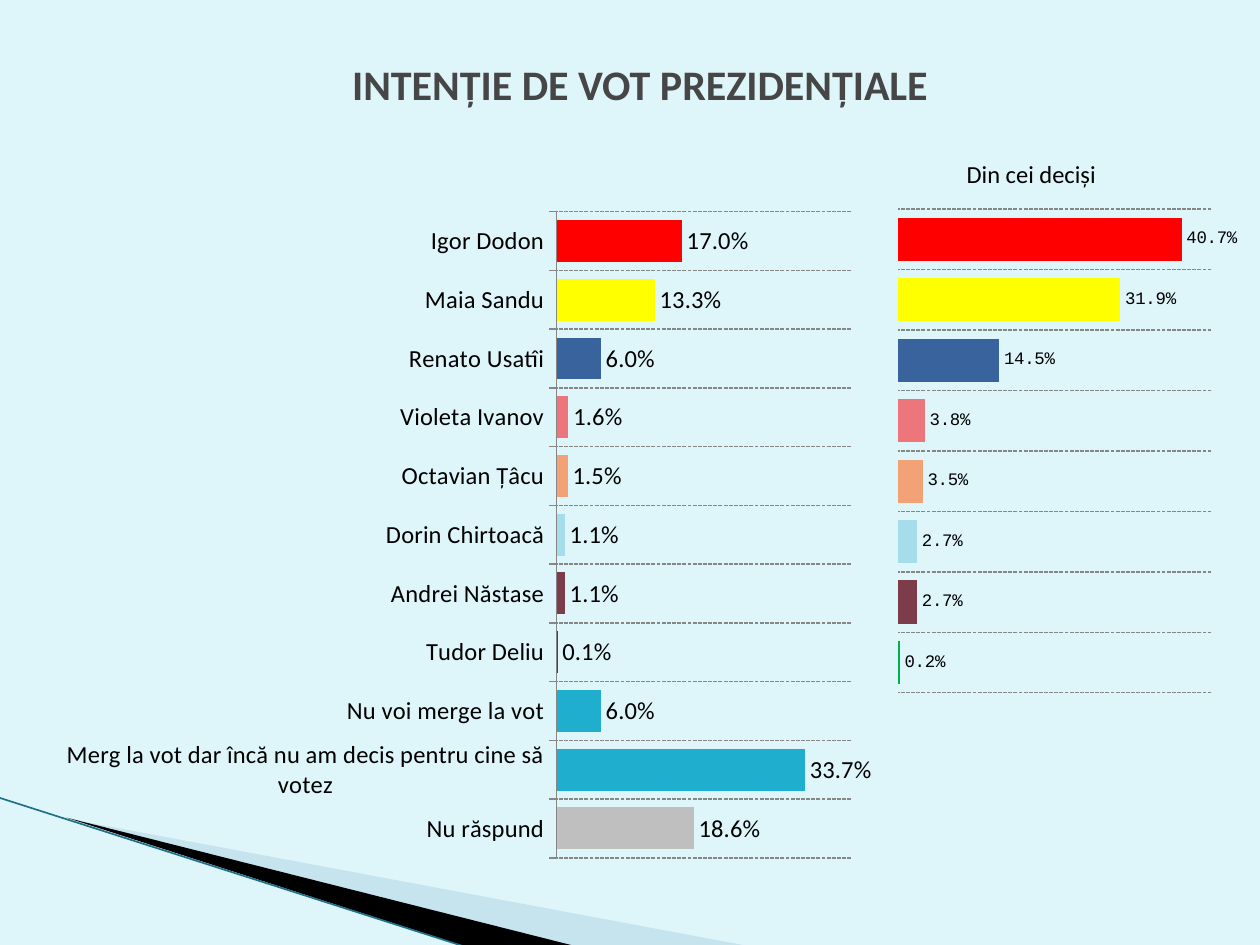
from pptx import Presentation
from pptx.chart.data import CategoryChartData
from pptx.dml.color import RGBColor
from pptx.enum.chart import XL_CHART_TYPE as CT, XL_LABEL_POSITION as LP, XL_TICK_MARK as TM
from pptx.enum.dml import MSO_LINE
from pptx.enum.shapes import MSO_CONNECTOR
from pptx.enum.text import MSO_ANCHOR, PP_ALIGN
from pptx.oxml import parse_xml
from pptx.oxml.ns import nsdecls, qn
from pptx.util import Inches, Pt
from lxml.etree import SubElement


def rgb(value):
    return RGBColor.from_string(value)


def set_font(font, color="000000", **values):
    for name, value in values.items():
        setattr(font, name, value)
    font.color.rgb = rgb(color)


class Deck:
    font = "Calibri"
    background = "DEF5FA"
    grid = "868686"
    percent = "0.0%"

    def __init__(self, width, height):
        self.prs = Presentation()
        self.prs.slide_width, self.prs.slide_height = Inches(width), Inches(height)

    def add_slide(self):
        self.s = self.prs.slides.add_slide(self.prs.slide_layouts[6])
        fill = self.s.background.fill
        fill.solid()
        fill.fore_color.rgb = rgb(self.background)

    def text(self, box, content, **values):
        sp = self.s.shapes.add_textbox(*map(Inches, box))
        tf = sp.text_frame
        tf.word_wrap = True
        tf.vertical_anchor = MSO_ANCHOR.MIDDLE
        p = tf.paragraphs[0]
        p.alignment = PP_ALIGN.CENTER
        r = p.add_run()
        r.text = content
        set_font(r.font, name=self.font, **values)

    def polygon(self, points, color, alpha=None):
        first, *rest = [(Inches(x), Inches(y)) for x, y in points]
        builder = self.s.shapes.build_freeform(*first)
        builder.add_line_segments(rest)
        sp = builder.convert_to_shape()
        sp.shadow.inherit = False
        sp.fill.solid()
        sp.fill.fore_color.rgb = rgb(color)
        sp.line.fill.background()
        if alpha:
            clr = sp.fill._xPr.find(qn("a:solidFill"))[0]
            SubElement(clr, qn("a:alpha"), val=str(alpha * 1000))

    def line(self, start, end, color, width):
        cx = self.s.shapes.add_connector(MSO_CONNECTOR.STRAIGHT, *map(Inches, start + end))
        cx.line.color.rgb = rgb(color)
        cx.line.width = Pt(width)
        SubElement(cx._element.spPr, qn("a:effectLst"))

    def bars(self, box, plot_box, rows, maximum, font, size, show_names):
        data = CategoryChartData(number_format=self.percent)
        data.categories = [name for name, _, _ in rows]
        data.add_series("Series 1", [value for _, value, _ in rows])
        chart = self.s.shapes.add_chart(CT.BAR_CLUSTERED, *map(Inches, box), data).chart
        chart.has_legend = chart.has_title = False
        set_font(chart.font, name=font, size=Pt(size))
        self.place_plot(chart, box, plot_box)

        axis = chart.category_axis
        axis.visible = show_names
        axis.major_tick_mark = TM.OUTSIDE
        axis.has_major_gridlines = True
        for line in (axis.format.line, axis.major_gridlines.format.line):
            line.color.rgb = rgb(self.grid)
            line.width = Pt(0.75)
        axis.major_gridlines.format.line.dash_style = MSO_LINE.SQUARE_DOT

        axis = chart.value_axis
        settings = {"visible": False, "has_major_gridlines": False,
                    "minimum_scale": 0, "maximum_scale": maximum}
        for name, value in settings.items():
            setattr(axis, name, value)
        axis.tick_labels.number_format = self.percent
        axis.tick_labels.number_format_is_linked = False

        plot = chart.plots[0]
        settings = {"gap_width": 40, "overlap": -10,
                    "vary_by_categories": False, "has_data_labels": True}
        for name, value in settings.items():
            setattr(plot, name, value)
        settings = {"show_value": True, "number_format": self.percent,
                    "number_format_is_linked": False, "position": LP.OUTSIDE_END}
        for name, value in settings.items():
            setattr(plot.data_labels, name, value)
        set_font(plot.data_labels.font, name=font, size=Pt(size))

        series = plot.series[0]
        series.invert_if_negative = False
        series.format.fill.solid()
        series.format.fill.fore_color.rgb = rgb("2DA2BF")
        for i, (_, _, color) in enumerate(rows):
            fill = series.points[i].format.fill
            fill.solid()
            fill.fore_color.rgb = rgb(color)

    def place_plot(self, chart, box, plot_box):
        left, top, width, height = box
        x, y, w, h = plot_box
        parts = {"x": (x - left) / width, "y": (y - top) / height,
                 "w": w / width, "h": h / height}
        values = "".join(f'<c:{k} val="{v:.4f}"/>' for k, v in parts.items())
        layout = parse_xml(
            f'<c:layout {nsdecls("c")}><c:manualLayout><c:layoutTarget val="inner"/>'
            f'<c:xMode val="edge"/><c:yMode val="edge"/>{values}'
            '</c:manualLayout></c:layout>')
        area = chart._chartSpace.chart.plotArea
        for old in area.findall(qn("c:layout")):
            area.remove(old)
        area.insert(0, layout)


ALL_VOTERS = [
    ("Nu răspund", 0.186, "BFBFBF"),
    ("Merg la vot dar încă nu am decis pentru cine să votez", 0.337, "1FAECD"),
    ("Nu voi merge la vot", 0.06, "1FAECD"),
    ("Tudor Deliu", 0.001, "464646"),
    ("Andrei Năstase", 0.011, "7D3C4A"),
    ("Dorin Chirtoacă", 0.011, "A6DDEA"),
    ("Octavian Țâcu", 0.015, "F3A276"),
    ("Violeta Ivanov", 0.016, "EC767C"),
    ("Renato Usatîi", 0.06, "39639D"),
    ("Maia Sandu", 0.133, "FFFF00"),
    ("Igor Dodon", 0.17, "FF0000"),
]
DECIDED_SHARES = [0.002, 0.027, 0.027, 0.035, 0.038, 0.145, 0.319, 0.407]


def main():
    deck = Deck(10, 7.5)
    deck.add_slide()
    deck.polygon([(0.55, 6.5), (5.95, 7.51), (4.56, 7.51)], "A0CBDC", alpha=40)
    deck.polygon([(0.53, 6.49), (4.57, 7.51), (3.72, 7.52)], "000000")
    deck.line((-0.01, 6.33), (3.71, 7.52), "1F7089", 0.95)
    deck.text((0.58, 0.25, 9, 0.83), "INTENȚIE DE VOT PREZIDENȚIALE",
              color="464646", size=Pt(24), bold=True)
    deck.bars((0.42, 1.58, 6.5, 5.33), (4.42, 1.68, 2.34, 5.13),
              ALL_VOTERS, 0.4, "Calibri", 14, True)

    candidate_colors = ["00B050"] + [color for _, _, color in ALL_VOTERS[4:]]
    decided = [(str(i), value, color) for i, (value, color)
               in enumerate(zip(DECIDED_SHARES, candidate_colors), 1)]
    deck.bars((7.08, 1.58, 2.75, 4), (7.13, 1.66, 2.51, 3.84),
              decided, 0.45, "Courier New", 10, False)
    deck.text((6.78, 1.21, 2.81, 0.34), "Din cei deciși", size=Pt(14))
    deck.prs.save("out.pptx")


if __name__ == "__main__":
    main()
